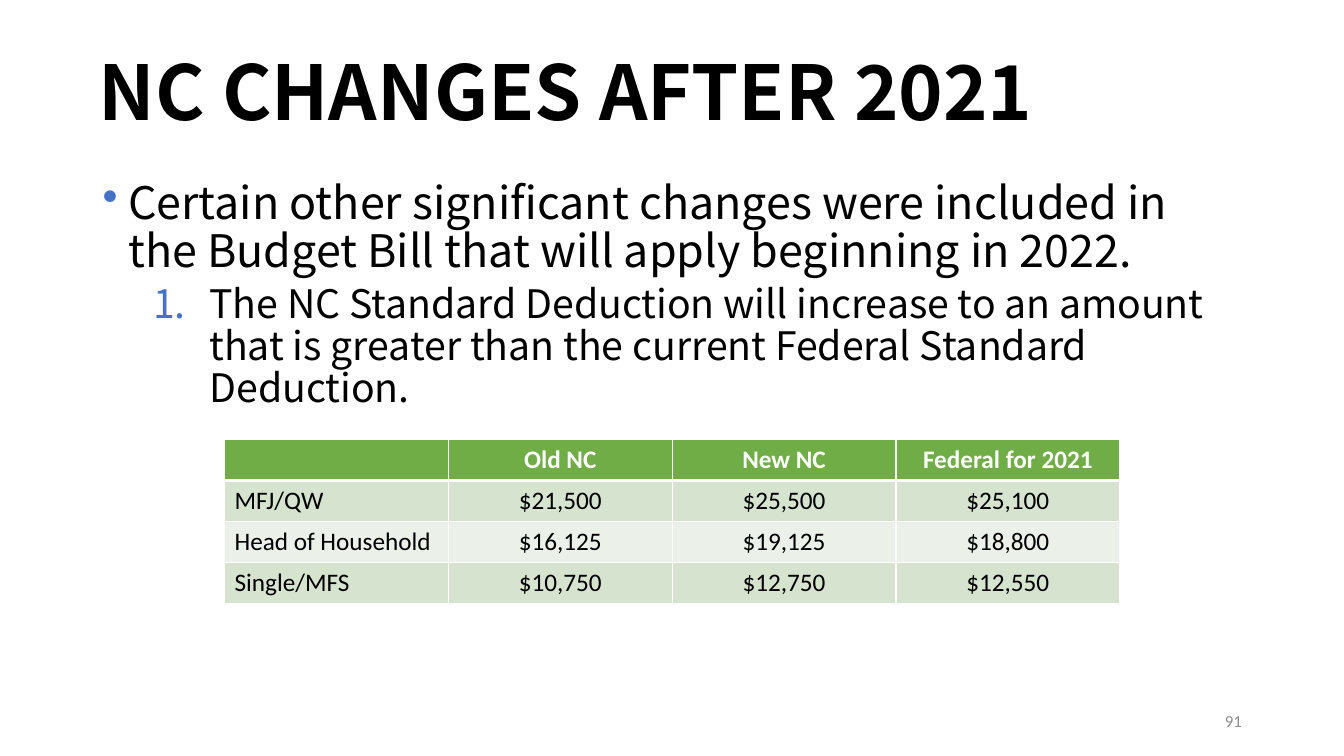
from pptx import Presentation
from pptx.util import Cm, Pt
from pptx.dml.color import RGBColor as RGB
from pptx.enum.text import PP_ALIGN as Align, MSO_ANCHOR as Anchor
from pptx.oxml import parse_xml
from pptx.oxml.ns import nsdecls

TITLE = "NC CHANGES AFTER 2021"
POINTS = [
    ("Certain other significant changes were included in the Budget Bill "
     "that will apply beginning in 2022.",
     32, 10, 0.64, -0.64, '<a:buChar {} char="•"/>'),
    ("The NC Standard Deduction will increase to an amount that is greater "
     "than the current Federal Standard Deduction.",
     28, 5, 2.69, -1.42, '<a:buAutoNum {} type="arabicPeriod"/>'),
]
ROWS = [
    ("", "Old NC", "New NC", "Federal for 2021"),
    ("MFJ/QW", "$21,500", "$25,500", "$25,100"),
    ("Head of Household", "$16,125", "$19,125", "$18,800"),
    ("Single/MFS", "$10,750", "$12,750", "$12,550"),
]
PAGE = "91"

BLACK = RGB(0, 0, 0)
WHITE = RGB(255, 255, 255)
GREY = RGB(0x8C, 0x8C, 0x8C)
BLUE = RGB(0x44, 0x72, 0xC4)
GREEN = RGB(0x70, 0xAD, 0x47)
BANDS = (RGB(0xEB, 0xF1, 0xE9), RGB(0xD5, 0xE3, 0xCF))
HEAD, BODY = "Noto Sans CJK JP", "Calibri"

COL, ROW = Cm(5.64), Cm(1.03)
LEADING = 0.9


def style(para, size, font, color, bold=False):
    for run in para.runs:
        face = run.font
        face.size, face.name, face.bold = Pt(size), font, bold
        face.color.rgb = color


def add_box(slide, left, top, width, height, anchor):
    box = slide.shapes.add_textbox(Cm(left), Cm(top), Cm(width), Cm(height))
    frame = box.text_frame
    frame.word_wrap = True
    frame.vertical_anchor = anchor
    return frame


def add_bullet(para, left, hang, mark):
    props = para._p.get_or_add_pPr()
    props.set("marL", str(Cm(left)))
    props.set("indent", str(Cm(hang)))
    space = nsdecls("a")
    props.append(parse_xml(
        f'<a:buClr {space}><a:srgbClr val="{BLUE}"/></a:buClr>'))
    props.append(parse_xml(mark.format(space)))


def add_edges(cell, widths):
    props = cell._tc.get_or_add_tcPr()
    for i, (side, width) in enumerate(widths.items()):
        props.insert(i, parse_xml(
            f'<a:ln{side} {nsdecls("a")} w="{Pt(width)}"><a:solidFill>'
            f'<a:srgbClr val="{WHITE}"/></a:solidFill></a:ln{side}>'))


def add_grid(slide):
    count, wide = len(ROWS), len(ROWS[0])
    table = slide.shapes.add_table(
        count, wide, Cm(5.66), Cm(11.08), COL * wide, ROW * count).table
    for col in table.columns:
        col.width = COL
    for r, row in enumerate(ROWS):
        table.rows[r].height = ROW
        top = r == 0
        for c, text in enumerate(row):
            cell = table.cell(r, c)
            cell.text_frame.text = text
            para = cell.text_frame.paragraphs[0]
            para.alignment = Align.CENTER if c else Align.LEFT
            style(para, 18, BODY, WHITE if top else BLACK, top)
            cell.fill.solid()
            cell.fill.fore_color.rgb = GREEN if top else BANDS[r % 2]
            add_edges(cell, {"L": 1, "R": 1, "T": 3 if r == 1 else 1,
                             "B": 3 if top else 1})


def main():
    deck = Presentation()
    deck.slide_width, deck.slide_height = Cm(33.87), Cm(19.05)
    slide = deck.slides.add_slide(deck.slide_layouts[6])

    title = add_box(slide, 2.24, 0.33, 29.21, 4.19, Anchor.MIDDLE)
    title.text = TITLE
    title.paragraphs[0].line_spacing = LEADING
    style(title.paragraphs[0], 54, HEAD, BLACK, True)

    body = add_box(slide, 2.34, 4.42, 29.21, 12.75, Anchor.TOP)
    body.text = "\n".join(point[0] for point in POINTS)
    for para, (_, size, gap, left, hang, mark) in zip(body.paragraphs, POINTS):
        para.line_spacing = LEADING
        para.space_before = Pt(gap)
        add_bullet(para, left, hang, mark)
        style(para, size, HEAD, BLACK)
    body.paragraphs[1].level = 1

    page = add_box(slide, 23.93, 17.65, 7.62, 1.02, Anchor.MIDDLE)
    page.text = PAGE
    page.paragraphs[0].alignment = Align.RIGHT
    style(page.paragraphs[0], 12, BODY, GREY)

    add_grid(slide)
    deck.save("out.pptx")


if __name__ == "__main__":
    main()
